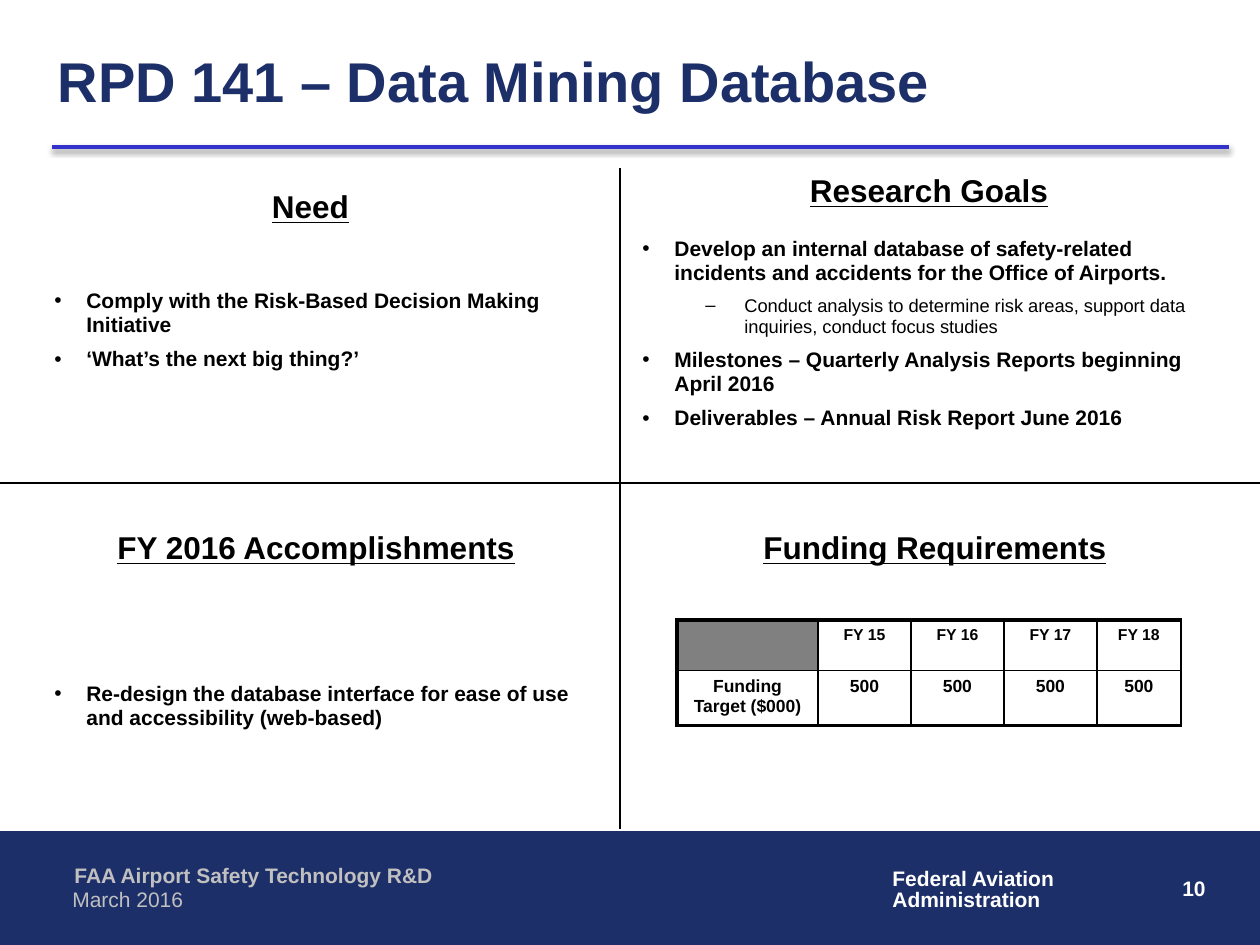
"""Build a quad-chart slide on the data mining database project."""
from lxml import etree
from pptx import Presentation
from pptx.dml.color import RGBColor
from pptx.enum.shapes import MSO_CONNECTOR, MSO_SHAPE
from pptx.enum.text import MSO_ANCHOR, PP_ALIGN
from pptx.oxml import parse_xml
from pptx.oxml.ns import nsdecls, qn
from pptx.util import Emu, Pt

NAVY = RGBColor(0x1D, 0x2F, 0x68)
BLUE = RGBColor(0x33, 0x33, 0xCC)
BLACK = RGBColor(0, 0, 0)
WHITE = RGBColor(0xFF, 0xFF, 0xFF)
SILVER = RGBColor(0xC0, 0xC0, 0xC0)
GRAY = RGBColor(0x80, 0x80, 0x80)
LEFT, CENTER, RIGHT = PP_ALIGN.LEFT, PP_ALIGN.CENTER, PP_ALIGN.RIGHT


def px(n):
    return Emu(round(n * 914400 / 126))


def add_text(tf, lines, size, color=BLACK, bold=True, align=LEFT, spacing=1.0, underline=None):
    tf.word_wrap = True
    for i, line in enumerate(lines):
        p = tf.paragraphs[0] if i == 0 else tf.add_paragraph()
        p.alignment = align
        p.line_spacing = spacing
        p.space_before = Pt(0)
        r = p.add_run()
        r.text = line
        r.font.name = "Arial"
        r.font.size = Pt(size)
        r.font.bold = bold
        r.font.underline = underline
        r.font.color.rgb = color


prs = Presentation()
prs.slide_width, prs.slide_height = px(1260), px(945)
s = prs.slides.add_slide(prs.slide_layouts[5])

bar = s.shapes.add_shape(MSO_SHAPE.RECTANGLE, 0, px(832), px(1260), px(112))
bar.shadow.inherit = False
bar.fill.solid()
bar.fill.fore_color.rgb = NAVY
bar.line.color.rgb = NAVY
bar.line.width = Pt(0.75)

footers = [
    ((956, 869, 262, 63), ["10"], WHITE, True, RIGHT, 1.0),
    ((880, 863, 220, 56), ["Federal Aviation", "Administration"], WHITE, True, LEFT, 0.85),
    ((62, 856, 659, 38), ["FAA Airport Safety Technology R&D"], SILVER, True, LEFT, 1.0),
    ((60, 880, 515, 39), ["March 2016"], SILVER, False, LEFT, 1.0),
]
for box, lines, color, bold, align, spacing in footers:
    tb = s.shapes.add_textbox(*map(px, box))
    add_text(tb.text_frame, lines, 12, color, bold, align, spacing)

title = s.shapes.title
title.left, title.top, title.width, title.height = map(px, (45, 42, 1168, 84))
title.text_frame.vertical_anchor = MSO_ANCHOR.MIDDLE
add_text(title.text_frame, ["RPD 141 – Data Mining Database"], 32, NAVY, spacing=0.93)

rules = [
    ((620, 168, 620, 829), BLACK, 0.75, None),
    ((0, 483, 1260, 483), BLACK, 0.75, None),
    ((52, 147, 1229, 147), BLUE, 2, 38000),
]
for ends, color, width, shadow in rules:
    line = s.shapes.add_connector(MSO_CONNECTOR.STRAIGHT, *map(px, ends))
    line.line.color.rgb = color
    line.line.width = Pt(width)
    effects = etree.SubElement(line._element.spPr, qn("a:effectLst"))
    if shadow:
        effects.append(parse_xml(
            f'<a:outerShdw {nsdecls("a")} blurRad="40000" dist="20000" dir="5400000" rotWithShape="0">'
            f'<a:srgbClr val="000000"><a:alpha val="{shadow}"/></a:srgbClr></a:outerShdw>'))

headings = [
    ((69, 184, 483, 42), "Need", CENTER),
    ((661, 168, 536, 42), "Research Goals", CENTER),
    ((105, 525, 525, 48), "FY 2016 Accomplishments", LEFT),
    ((661, 525, 548, 68), "Funding Requirements", CENTER),
]
for box, heading, align in headings:
    tb = s.shapes.add_textbox(*map(px, box))
    add_text(tb.text_frame, [heading], 18, align=align, spacing=0.95, underline=True)

bodies = [
    ((42, 283, 578, 99), [
        "Comply with the Risk-Based Decision Making Initiative",
        "‘What’s the next big thing?’"], []),
    ((630, 231, 609, 213), [
        "Develop an internal database of safety-related incidents and accidents for the Office of Airports.",
        "Conduct analysis to determine risk areas, support data inquiries, conduct focus studies",
        "Milestones – Quarterly Analysis Reports beginning April 2016",
        "Deliverables – Annual Risk Report June 2016"], [1]),
    ((42, 676, 578, 63), [
        "Re-design the database interface for ease of use and accessibility (web-based)"], []),
]
for box, lines, subs in bodies:
    tf = s.shapes.add_textbox(*map(px, box)).text_frame
    add_text(tf, lines, 12, spacing=0.95)
    for i, p in enumerate(tf.paragraphs):
        margin, hang, mark = (102, 39, "–") if i in subs else (32, 32, "•")
        pPr = p._p.get_or_add_pPr()
        pPr.set("marL", str(px(margin)))
        pPr.set("indent", str(px(-hang)))
        color = etree.SubElement(pPr, qn("a:buClr"))
        etree.SubElement(color, qn("a:srgbClr"), val=str(BLACK))
        etree.SubElement(pPr, qn("a:buFont"), typeface="Arial")
        etree.SubElement(pPr, qn("a:buChar"), char=mark)
        if i > 0:
            p.space_before = Pt(6)
        if i in subs:
            p.level = 1
            p.runs[0].font.size = Pt(10.5)
            p.runs[0].font.bold = False

funding = [
    ["", "FY 15", "FY 16", "FY 17", "FY 18"],
    ["Funding Target ($000)", "500", "500", "500", "500"],
]
col_widths = [141, 93, 93, 93, 84]
row_heights = [50, 55]
table = s.shapes.add_table(2, 5, px(677), px(620), px(sum(col_widths)), px(sum(row_heights))).table
for column, width in zip(table.columns, col_widths):
    column.width = px(width)
for row, height in zip(table.rows, row_heights):
    row.height = px(height)
for i, values in enumerate(funding):
    for j, value in enumerate(values):
        cell = table.cell(i, j)
        tcPr = cell._tc.get_or_add_tcPr()
        for side, thick in (("L", j == 0), ("R", False), ("T", i == 0), ("B", i == 1)):
            ln = etree.SubElement(tcPr, qn(f"a:ln{side}"), w=str(Pt(2.25 if thick else 1)))
            fill = etree.SubElement(ln, qn("a:solidFill"))
            etree.SubElement(fill, qn("a:srgbClr"), val=str(BLACK))
        cell.fill.solid()
        cell.fill.fore_color.rgb = WHITE if value else GRAY
        if value:
            add_text(cell.text_frame, [value], 10 if i else 9, align=CENTER)

prs.save("out.pptx")
